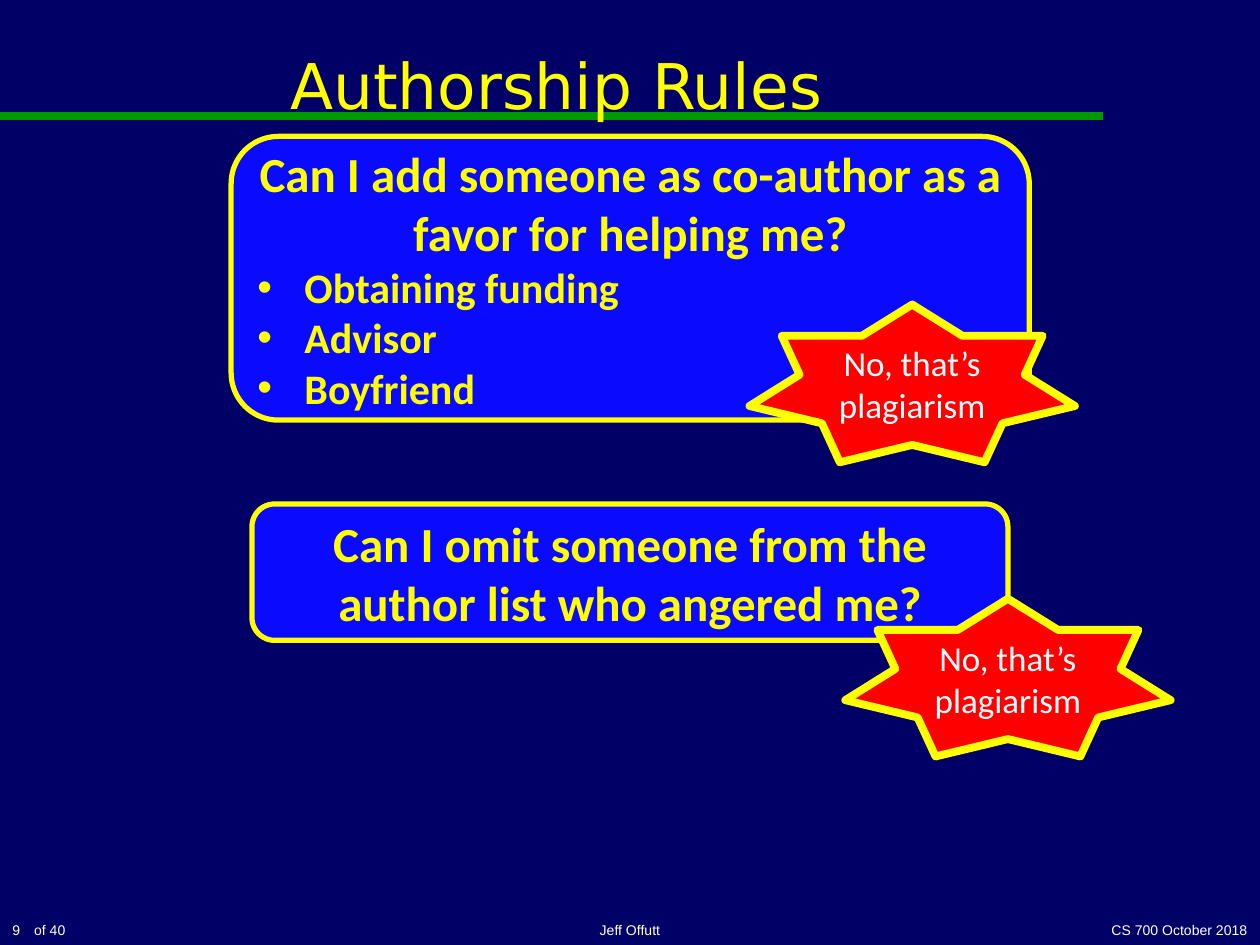
from lxml.etree import SubElement
from pptx import Presentation
from pptx.dml.color import RGBColor
from pptx.enum.shapes import MSO_CONNECTOR as Connector, MSO_SHAPE as Preset
from pptx.enum.text import MSO_ANCHOR as Anchor, MSO_AUTO_SIZE as AutoSize, PP_ALIGN as Align
from pptx.oxml.ns import qn
from pptx.util import Cm, Pt

COLORS = {
    "background": "000066",
    "rule": "009900",
    "box": "0A0AFF",
    "burst": "FF0000",
    "yellow": "FFFF00",
    "white": "FFFFFF",
}


def color(name):
    return RGBColor.from_string(COLORS[name])


class SlideBuilder:
    heading_size = 28
    bullet_size = 24
    bullet_indent = Cm(0.95)

    def __init__(self, slide):
        self.slide = slide
        fill = slide.background.fill
        fill.solid()
        fill.fore_color.rgb = color("background")

    def format(self, paragraph, font_name, size, font_color, align, bold=False):
        paragraph.alignment = align
        for run in paragraph.runs:
            run.font.name = font_name
            run.font.size = Pt(size)
            run.font.bold = bold
            run.font.color.rgb = color(font_color)

    def rule(self, y, end):
        line = self.slide.shapes.add_connector(Connector.STRAIGHT, Cm(0), Cm(y), Cm(end), Cm(y))
        line.line.color.rgb = color("rule")
        line.line.width = Pt(4.5)
        SubElement(line._element.spPr, qn("a:effectLst"))

    def text(self, text, bounds, align, font_name="Arial", size=8, font_color="white",
             anchor=Anchor.BOTTOM, wrap=True):
        text_frame = self.slide.shapes.add_textbox(*map(Cm, bounds)).text_frame
        text_frame.text = text
        text_frame.word_wrap = wrap
        text_frame.auto_size = AutoSize.NONE if wrap else AutoSize.SHAPE_TO_FIT_TEXT
        text_frame.vertical_anchor = anchor
        self.format(text_frame.paragraphs[0], font_name, size, font_color, align)

    def shape(self, preset, bounds, fill, line_width, anchor, text):
        shape = self.slide.shapes.add_shape(preset, *map(Cm, bounds))
        shape.shadow.inherit = False
        shape.fill.solid()
        shape.fill.fore_color.rgb = color(fill)
        shape.line.color.rgb = color("yellow")
        shape.line.width = Pt(line_width)
        text_frame = shape.text_frame
        text_frame.text = text
        text_frame.word_wrap = True
        text_frame.vertical_anchor = anchor
        return text_frame

    def question(self, text, bounds, bullets=()):
        text_frame = self.shape(Preset.ROUNDED_RECTANGLE, bounds, "box", 3, Anchor.MIDDLE, text)
        self.format(text_frame.paragraphs[0], "Calibri", self.heading_size, "yellow",
                    Align.CENTER, True)
        for bullet in bullets:
            paragraph = text_frame.add_paragraph()
            paragraph.text = bullet
            properties = paragraph._p.get_or_add_pPr()
            properties.set("marL", str(self.bullet_indent))
            properties.set("indent", str(-self.bullet_indent))
            SubElement(properties, qn("a:buFont"), typeface="Arial")
            SubElement(properties, qn("a:buChar"), char="•")
            self.format(paragraph, "Calibri", self.bullet_size, "yellow", Align.LEFT, True)

    def answer(self, text, left, top):
        text_frame = self.shape(Preset.STAR_7_POINT, (left, top, 6.56, 3.18), "burst", 4.5,
                                Anchor.TOP, text)
        self.format(text_frame.paragraphs[0], "Calibri", 20, "white", Align.CENTER)


def main():
    presentation = Presentation()
    presentation.slide_width = Cm(25.4)
    presentation.slide_height = Cm(19.05)
    builder = SlideBuilder(presentation.slides.add_slide(presentation.slide_layouts[6]))

    builder.rule(2.33, 22.23)
    builder.text("of 40", (0.43, 18.44, 1.14, 0.61), Align.RIGHT, wrap=False)
    builder.text("Authorship Rules", (0.21, 0, 22.01, 3.39), Align.CENTER,
                 "DejaVu Sans", 36, "yellow", Anchor.MIDDLE)

    footer_top, footer_height = 18.2, 0.85
    for text, left, width, align in (
        ("Jeff Offutt", 8.68, 8.04, Align.CENTER),
        ("9", 0, 4.45, Align.LEFT),
        ("CS 700 October 2018", 20.11, 5.29, Align.RIGHT),
    ):
        builder.text(text, (left, footer_top, width, footer_height), align)

    verdict = "No, that’s plagiarism"
    builder.question("Can I add someone as co-author as a favor for helping me?",
                     (4.66, 2.75, 16.09, 5.72),
                     ("Obtaining funding", "Advisor", "Boyfriend"))
    builder.answer(verdict, 15.11, 6.14)
    builder.question("Can I omit someone from the author list who angered me?",
                     (5.08, 10.16, 15.24, 2.75))
    builder.answer(verdict, 17.04, 12.07)

    presentation.save("out.pptx")


if __name__ == "__main__":
    main()
